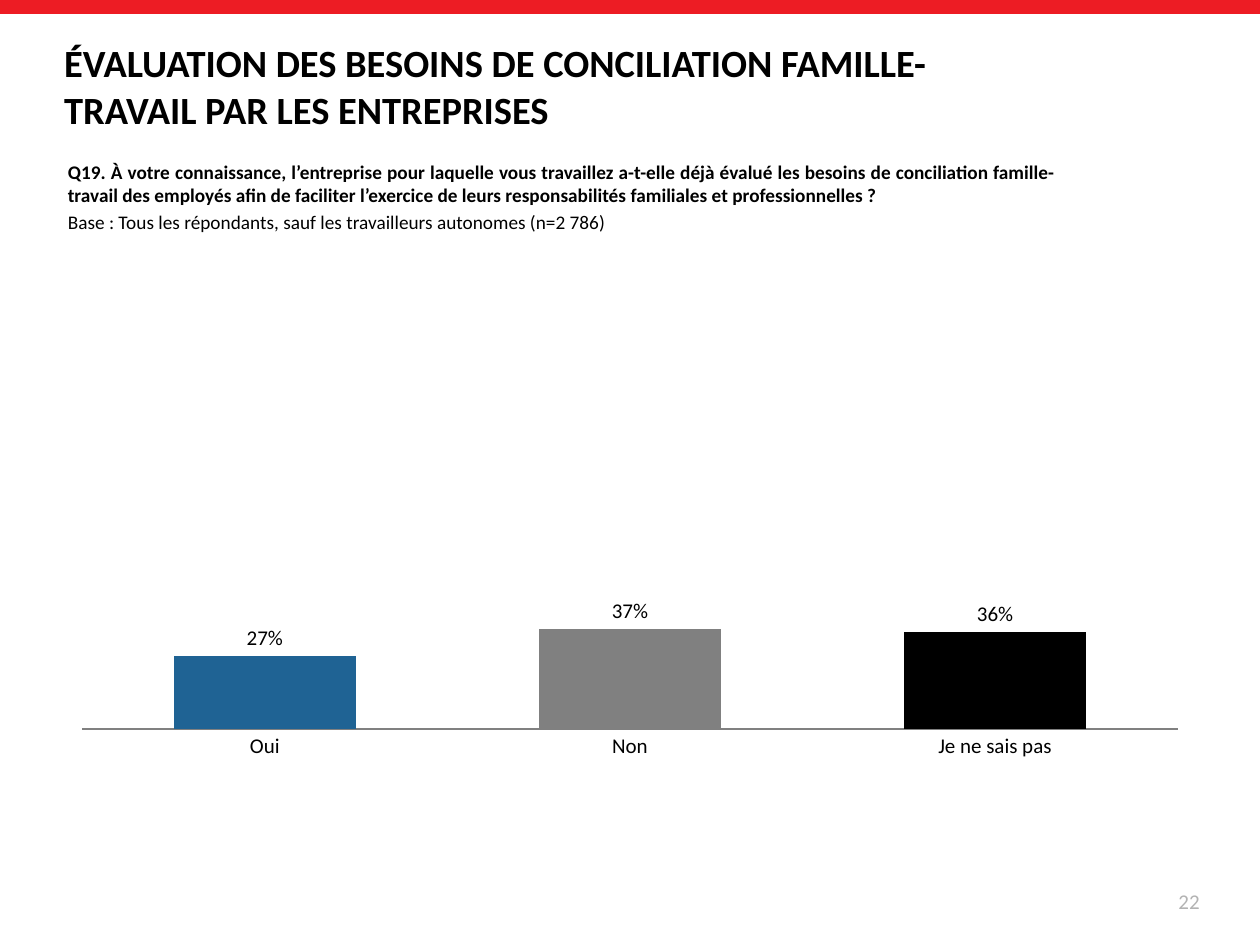
import pptx
import pptx.util
import pptx.dml.color
import pptx.chart.data
import pptx.enum.chart
import pptx.enum.shapes
import pptx.enum.text
from lxml import etree

Inches, Pt = pptx.util.Inches, pptx.util.Pt
Align, Anchor = pptx.enum.text.PP_ALIGN, pptx.enum.text.MSO_ANCHOR

# Content
TITLE = "ÉVALUATION DES BESOINS DE CONCILIATION FAMILLE-TRAVAIL PAR LES ENTREPRISES"
NOTES = [
    ("Q19. À votre connaissance, l’entreprise pour laquelle vous travaillez a-t-elle déjà "
     "évalué les besoins de conciliation famille-travail des employés afin de faciliter "
     "l’exercice de leurs responsabilités familiales et professionnelles ?", True),
    ("Base : Tous les répondants, sauf les travailleurs autonomes (n=2 786)", False),
]
PAGE = "22"
BARS = [("Oui", 0.27, "blue"), ("Non", 0.37, "gray"), ("Je ne sais pas", 0.36, "black")]
PLOT = {"x": 0.017, "y": 0.371, "w": 0.966, "h": 0.44}  # shares of the chart frame

COLORS = {"red": "ED1C24", "blue": "1F6394", "gray": "808080",
          "black": "000000", "pale": "B3B3B3"}
FONT = "Calibri"


def tint(name):
    return pptx.dml.color.RGBColor.from_string(COLORS[name])


def style(font, size, color="black", bold=False):
    font.name, font.size, font.bold = FONT, Pt(size), bold
    font.color.rgb = tint(color)


def place(shape, left, top, width, height):
    shape.left, shape.top = Inches(left), Inches(top)
    shape.width, shape.height = Inches(width), Inches(height)


def write(shape, lines, size, color="black", align=Align.LEFT, anchor=Anchor.TOP):
    frame = shape.text_frame
    frame.word_wrap = True
    frame.auto_size = pptx.enum.text.MSO_AUTO_SIZE.NONE
    frame.vertical_anchor = anchor
    frame.text = "\n".join(text for text, bold in lines)
    for i, (para, (text, bold)) in enumerate(zip(frame.paragraphs, lines)):
        para.alignment = align
        para.space_before = Pt(0.2 * size if i else 0)
        style(para.runs[0].font, size, color, bold)


deck = pptx.Presentation()
deck.slide_width, deck.slide_height = Inches(10), Inches(7.5)
slide = deck.slides.add_slide(deck.slide_layouts[5])
shapes = slide.shapes

# Top band
band = shapes.add_shape(pptx.enum.shapes.MSO_SHAPE.RECTANGLE, 0, 0,
                        deck.slide_width, Inches(0.11))
band.shadow.inherit = False
band.fill.solid()
band.fill.fore_color.rgb = tint("red")
band.line.fill.background()

# Title, question and page number
place(shapes.title, 0.41, 0.42, 7.66, 0.52)
write(shapes.title, [(TITLE, True)], 22, anchor=Anchor.MIDDLE)
note = shapes.add_textbox(0, 0, 0, 0)
place(note, 0.44, 1.22, 8.04, 1.18)
write(note, NOTES, 11, align=Align.JUSTIFY)
page = shapes.add_textbox(0, 0, 0, 0)
place(page, 7.29, 6.95, 2.33, 0.4)
write(page, [(PAGE, False)], 12, "pale", Align.RIGHT, Anchor.MIDDLE)

# Column chart
data = pptx.chart.data.CategoryChartData(number_format="0%")
data.categories = [name for name, value, color in BARS]
data.add_series("Series 1", [value for name, value, color in BARS])
chart = shapes.add_chart(pptx.enum.chart.XL_CHART_TYPE.COLUMN_CLUSTERED, Inches(0.5),
                         Inches(1.83), Inches(9), Inches(4.88), data).chart
chart.has_legend = chart.has_title = False
style(chart.font, 12)

# Axes
cats, vals = chart.category_axis, chart.value_axis
cats.major_tick_mark = pptx.enum.chart.XL_TICK_MARK.NONE
cats.format.line.color.rgb = tint("gray")
cats.format.line.width = Pt(1)
vals.minimum_scale, vals.maximum_scale = 0, 1
vals.has_major_gridlines = vals.visible = False

# Bars and their labels
plot = chart.plots[0]
plot.gap_width = 100
plot.vary_by_categories = False
for i, (name, value, color) in enumerate(BARS):
    fill = plot.series[0].points[i].format.fill
    fill.solid()
    fill.fore_color.rgb = tint(color)
plot.has_data_labels = True
labels = plot.data_labels
labels.show_value = True
labels.position = pptx.enum.chart.XL_LABEL_POSITION.OUTSIDE_END
labels.number_format, labels.number_format_is_linked = "0%", False
style(labels.font, 12)

# Fixed inner plot area
NS = "http://schemas.openxmlformats.org/drawingml/2006/chart"
area = chart.element.find(f".//{{{NS}}}plotArea")
for old in area.findall(f"{{{NS}}}layout"):
    area.remove(old)
layout = etree.Element(f"{{{NS}}}layout")
manual = etree.SubElement(layout, f"{{{NS}}}manualLayout")
rules = [("layoutTarget", "inner"), ("xMode", "edge"), ("yMode", "edge"), *PLOT.items()]
for tag, val in rules:
    etree.SubElement(manual, f"{{{NS}}}{tag}").set("val", str(val))
area.insert(0, layout)

deck.save("out.pptx")
